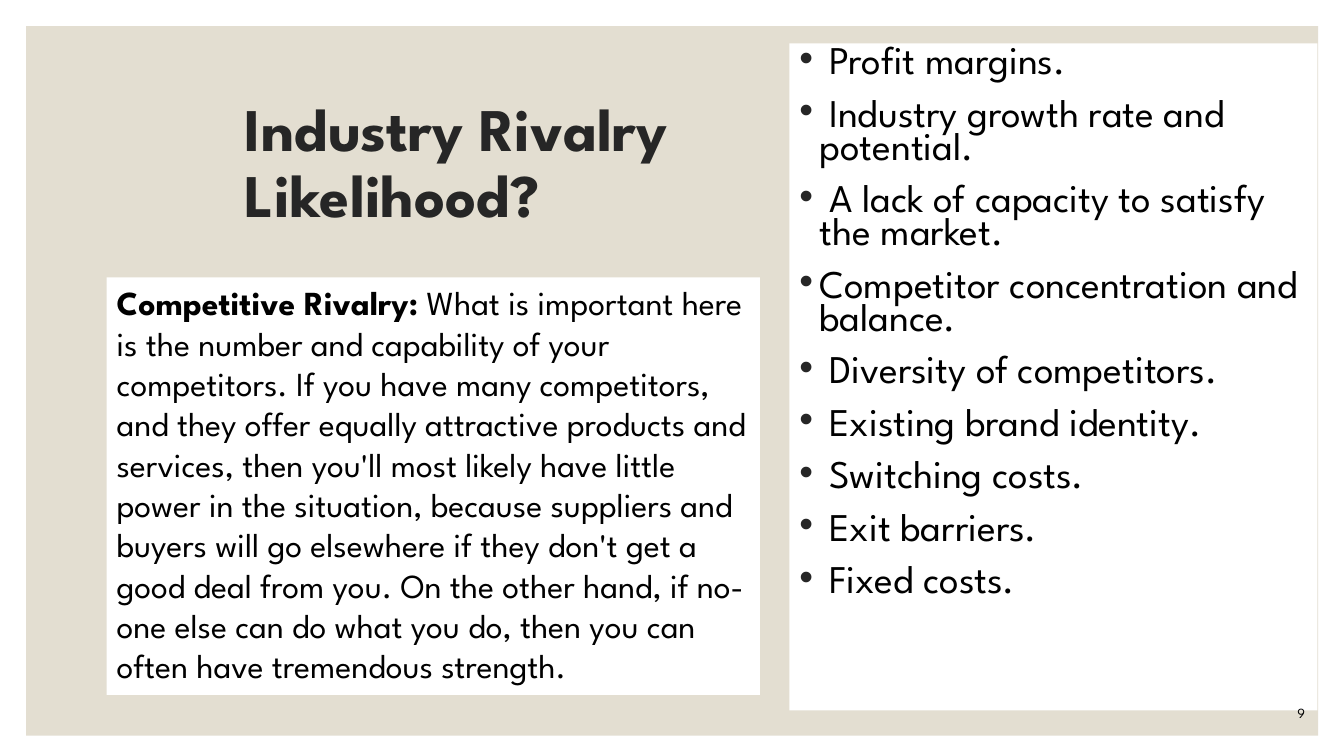
from lxml import etree
from pptx import Presentation
from pptx.dml.color import RGBColor
from pptx.enum.shapes import MSO_SHAPE
from pptx.enum.text import MSO_ANCHOR, MSO_AUTO_SIZE, PP_ALIGN
from pptx.oxml.ns import qn
from pptx.util import Cm, Pt

RECTANGLE = MSO_SHAPE.RECTANGLE
TOP, MIDDLE, BOTTOM = MSO_ANCHOR.TOP, MSO_ANCHOR.MIDDLE, MSO_ANCHOR.BOTTOM
LEFT, RIGHT = PP_ALIGN.LEFT, PP_ALIGN.RIGHT
NO_AUTOFIT = MSO_AUTO_SIZE.NONE

FONT = "League Spartan"
COLORS = {"sand": "E3DED1", "panel": "FFFFFF", "heading": "262626", "text": "000000"}

TITLE = "Industry Rivalry \vLikelihood?"
FACTORS = [
    " Profit margins.",
    " Industry growth rate and potential.",
    " A lack of capacity to satisfy the market.",
    "Competitor concentration and balance.",
    " Diversity of competitors.",
    " Existing brand identity.",
    " Switching costs.",
    " Exit barriers.",
    " Fixed costs.",
]
TERM = "Competitive Rivalry:"
EXPLANATION = (
    " What is important here is the number and capability of your competitors. "
    "If you have many competitors, and they offer equally attractive products and "
    "services, then you'll most likely have little power in the situation, because "
    "suppliers and buyers will go elsewhere if they don't get a good deal from you. "
    "On the other hand, if no-one else can do what you do, then you can often have "
    "tremendous strength."
)


def color(name):
    return RGBColor.from_string(COLORS[name])


def fill_shape(shape, name):
    shape.fill.solid()
    shape.fill.fore_color.rgb = color(name)


def place(shape, left, top, width, height):
    shape.left, shape.top = Cm(left), Cm(top)
    shape.width, shape.height = Cm(width), Cm(height)


def prepare_frame(shape, anchor):
    frame = shape.text_frame
    frame.word_wrap = True
    frame.auto_size = NO_AUTOFIT
    frame.vertical_anchor = anchor
    return frame


def format_paragraph(paragraph, size, name="text", bold=None, align=LEFT):
    paragraph.alignment = align
    font = paragraph.font
    font.name, font.size, font.bold = FONT, Pt(size), bold
    font.color.rgb = color(name)


def add_bullet(paragraph, indent):
    properties = paragraph._p.get_or_add_pPr()
    properties.set("marL", str(Cm(indent)))
    properties.set("indent", str(-Cm(indent)))
    bullet_color = etree.SubElement(properties, qn("a:buClr"))
    etree.SubElement(bullet_color, qn("a:srgbClr"), val=COLORS["heading"])
    etree.SubElement(properties, qn("a:buFont"), typeface="Arial")
    etree.SubElement(properties, qn("a:buChar"), char="•")


def add_background(slide):
    background = slide.shapes.add_shape(
        RECTANGLE, Cm(0.66), Cm(0.66), Cm(32.56), Cm(17.88))
    background.shadow.inherit = False
    background.line.fill.background()
    fill_shape(background, "sand")
    # Behind the placeholders
    slide.shapes._spTree.insert(2, background._element)


def fill_title(title):
    place(title, 5.92, 2.34, 18.9, 3.63)
    paragraph = prepare_frame(title, MIDDLE).paragraphs[0]
    paragraph.text = TITLE
    paragraph.line_spacing = 0.9
    format_paragraph(paragraph, 43.2, "heading", bold=True)


def fill_factors(body):
    place(body, 19.89, 1.09, 13.31, 16.81)
    fill_shape(body, "panel")
    frame = prepare_frame(body, TOP)
    for index, factor in enumerate(FACTORS):
        paragraph = frame.add_paragraph() if index else frame.paragraphs[0]
        paragraph.text = factor
        paragraph.line_spacing = 0.7
        paragraph.space_before = Pt(14)
        add_bullet(paragraph, 0.51)
        format_paragraph(paragraph, 28)


def add_text_box(slide, left, top, width, height, anchor=TOP):
    box = slide.shapes.add_textbox(Cm(left), Cm(top), Cm(width), Cm(height))
    return box, prepare_frame(box, anchor).paragraphs[0]


def main():
    presentation = Presentation()
    presentation.slide_width, presentation.slide_height = Cm(33.87), Cm(19.05)
    slide = presentation.slides.add_slide(presentation.slide_layouts[1])
    add_background(slide)

    # Title and list of factors
    fill_title(slide.shapes.title)
    fill_factors(slide.placeholders[1])

    # Slide number
    _, number = add_text_box(slide, 29.08, 17.53, 4.06, 0.76, BOTTOM)
    number.text = "9"
    format_paragraph(number, 10, align=RIGHT)

    # Explanation panel
    panel, paragraph = add_text_box(slide, 2.69, 6.99, 16.46, 10.52)
    fill_shape(panel, "panel")
    term = paragraph.add_run()
    term.text = TERM
    term.font.bold = True
    paragraph.add_run().text = EXPLANATION
    format_paragraph(paragraph, 24)

    presentation.save("out.pptx")


if __name__ == "__main__":
    main()
